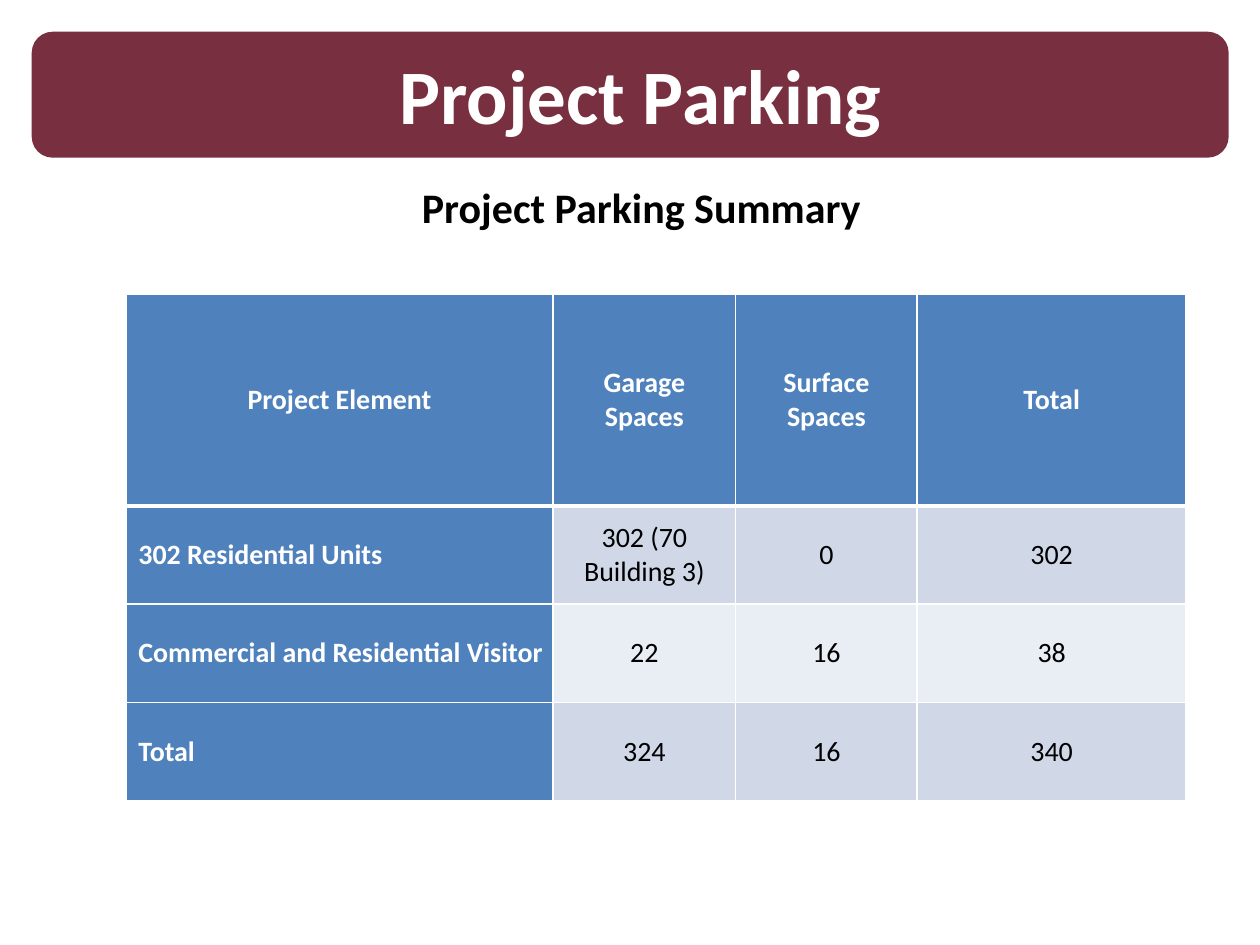
from pptx import Presentation
from pptx.dml.color import RGBColor
from pptx.enum.shapes import MSO_SHAPE
from pptx.enum.text import MSO_ANCHOR, PP_ALIGN
from pptx.oxml import parse_xml
from pptx.oxml.ns import nsdecls
from pptx.util import Cm, Pt


def rgb(value):
    return RGBColor.from_string(value)


def write(tf, text, size=16, color="000000", bold=False, align=PP_ALIGN.CENTER):
    tf.word_wrap = True
    p = tf.paragraphs[0]
    p.alignment = align
    r = p.add_run()
    r.text = text
    r.font.name = "Calibri"
    r.font.size = Pt(size)
    r.font.bold = bold
    r.font.color.rgb = rgb(color)


prs = Presentation()
prs.slide_width, prs.slide_height = Cm(25.4), Cm(19.05)
s = prs.slides.add_slide(prs.slide_layouts[6])

banner = s.shapes.add_shape(MSO_SHAPE.DOUBLE_BRACKET, Cm(0.64), Cm(0.64), Cm(24.13), Cm(2.54))
banner.shadow.inherit = False
banner.fill.solid()
banner.fill.fore_color.rgb = rgb("782F40")
banner.line.fill.background()

title = s.shapes.add_textbox(Cm(2.33), Cm(0.84), Cm(21.17), Cm(2.14))
write(title.text_frame, "Project Parking", size=44, color="FFFFFF", bold=True)

rows = [
    ["Project Element", "Garage Spaces", "Surface Spaces", "Total"],
    ["302 Residential Units", "302 (70 Building 3)", "0", "302"],
    ["Commercial and Residential Visitor", "22", "16", "38"],
    ["Total", "324", "16", "340"],
]
widths = [8.61, 3.68, 3.66, 5.42]
heights = [4.27, 1.98, 1.98, 1.98]
frame = s.shapes.add_table(4, 4, Cm(2.54), Cm(5.93), Cm(sum(widths)), Cm(sum(heights)))
table = frame.table
table.first_col = True
for column, width in zip(table.columns, widths):
    column.width = Cm(width)

for i, (values, height) in enumerate(zip(rows, heights)):
    table.rows[i].height = Cm(height)
    for j, text in enumerate(values):
        cell = table.cell(i, j)
        heading = i == 0 or j == 0
        label = i > 0 and j == 0
        cell.vertical_anchor = MSO_ANCHOR.MIDDLE
        cell.margin_left = Cm(0.25 if label else 0.17)
        cell.margin_right = Cm(0.17)
        cell.margin_top = cell.margin_bottom = 0
        cell.fill.solid()
        cell.fill.fore_color.rgb = rgb("4F81BD" if heading else "D0D8E8" if i % 2 else "E9EDF4")
        write(cell.text_frame, text, color="FFFFFF" if heading else "000000", bold=heading,
              align=PP_ALIGN.LEFT if label else PP_ALIGN.CENTER)
        tcPr = cell._tc.get_or_add_tcPr()
        for k, side in enumerate("LRTB"):
            thick = (i, side) in [(0, "B"), (1, "T")]
            tcPr.insert(k, parse_xml(
                f'<a:ln{side} {nsdecls("a")} w="{Pt(3 if thick else 1)}">'
                f'<a:solidFill><a:srgbClr val="FFFFFF"/></a:solidFill></a:ln{side}>'))

subtitle = s.shapes.add_textbox(Cm(1.07), Cm(3.53), Cm(23.72), Cm(2.06))
write(subtitle.text_frame, "Project Parking Summary", size=24, bold=True)

prs.save("out.pptx")
